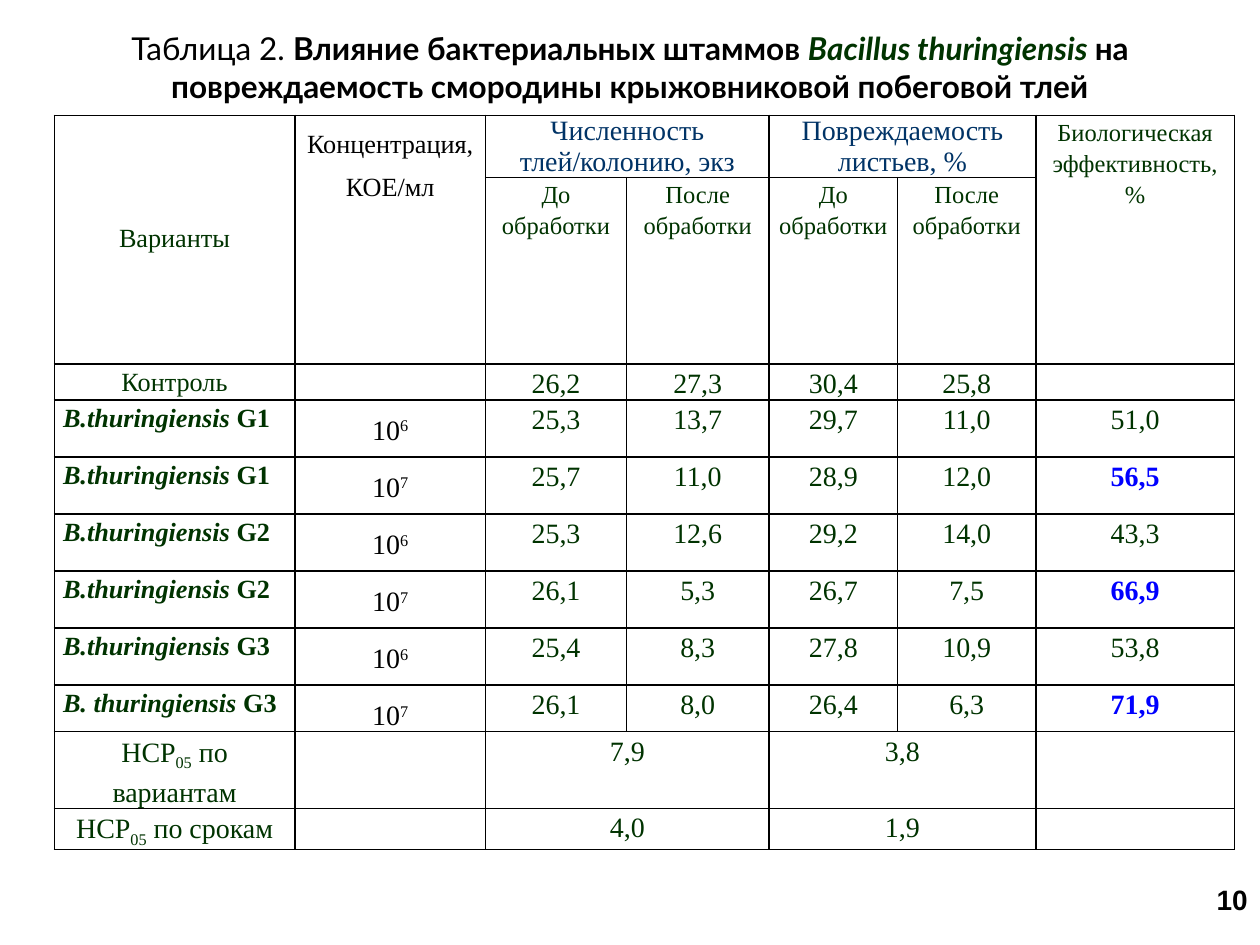
from lxml import etree
from pptx import Presentation
from pptx.dml.color import RGBColor
from pptx.enum.text import MSO_ANCHOR, MSO_AUTO_SIZE, PP_ALIGN
from pptx.oxml.ns import qn
from pptx.util import Pt

LEFT, CENTER, RIGHT = PP_ALIGN.LEFT, PP_ALIGN.CENTER, PP_ALIGN.RIGHT
MIDDLE, BOTTOM = MSO_ANCHOR.MIDDLE, MSO_ANCHOR.BOTTOM
NO_FIT = MSO_AUTO_SIZE.NONE
GREEN, NAVY, BLUE, BLACK = "003300", "003366", "0000FF", "000000"
SERIF = "Times New Roman"


def write(paragraph, text, size=16, color=GREEN, font=SERIF, bold=False,
          italic=False, baseline=0, align=CENTER, spacing=1.15):
    """Append a formatted run; baseline is in percent."""
    paragraph.alignment = align
    paragraph.line_spacing = spacing
    run = paragraph.add_run()
    run.text = text
    run.font.name = font
    run.font.size = Pt(size)
    run.font.bold = bold
    run.font.italic = italic
    run.font.color.rgb = RGBColor.from_string(color)
    if baseline:
        run.font._element.set("baseline", str(baseline * 1000))


prs = Presentation()
prs.slide_width, prs.slide_height = Pt(720), Pt(540)
slide = prs.slides.add_slide(prs.slide_layouts[5])

# Title
title = slide.shapes.title
title.left, title.top, title.width, title.height = Pt(36), Pt(16.6), Pt(648), Pt(43.2)
title.text_frame.auto_size = NO_FIT
title.text_frame.vertical_anchor = MIDDLE
heading = title.text_frame.paragraphs[0]
heading_format = {"size": 18, "font": "Lato", "spacing": 1.0}
write(heading, "Таблица 2. ", color=BLACK, **heading_format)
write(heading, "Влияние бактериальных штаммов ", color=BLACK, bold=True, **heading_format)
write(heading, "Bacillus thuringiensis ", bold=True, italic=True, **heading_format)
write(heading, "на повреждаемость смородины крыжовниковой побеговой тлей",
      color=BLACK, bold=True, **heading_format)

# Table grid
column_widths = [137.5, 109, 80.5, 81.5, 73.5, 79, 113.5]
row_heights = [35.4, 106.3, 20.6] + [32.6] * 5 + [26.6, 43.8, 23.6]
frame = slide.shapes.add_table(len(row_heights), len(column_widths), Pt(31), Pt(66),
                               Pt(sum(column_widths)), Pt(sum(row_heights)))
table = frame.table
table.first_row = table.horz_banding = False
for column, width in zip(table.columns, column_widths):
    column.width = Pt(width)
for row, height in zip(table.rows, row_heights):
    row.height = Pt(height)

# Plain cells with thin black borders
for cell in table.iter_cells():
    cell.margin_left = cell.margin_right = Pt(5)
    cell.margin_top = cell.margin_bottom = 0
    properties = cell._tc.get_or_add_tcPr()
    for side in ("a:lnL", "a:lnR", "a:lnT", "a:lnB"):
        border = etree.SubElement(properties, qn(side), w=str(Pt(1)))
        ink = etree.SubElement(border, qn("a:solidFill"))
        etree.SubElement(ink, qn("a:srgbClr"), val=BLACK)
    cell.fill.background()
    # Small end mark, so that empty cells do not stretch their rows
    cell.text_frame.paragraphs[0]._p.get_or_add_endParaRPr().set("sz", "1400")

# Merged cells
for column in (0, 1, 6):
    table.cell(0, column).merge(table.cell(1, column))
for row in (0, 9, 10):
    for column in (2, 4):
        table.cell(row, column).merge(table.cell(row, column + 1))

# Header
table.cell(0, 0).vertical_anchor = MIDDLE
table.cell(0, 0).margin_bottom = Pt(4)
concentration = table.cell(0, 1).text_frame
concentration.add_paragraph()
for paragraph, text in zip(concentration.paragraphs, ("Концентрация,", "КОЕ/мл")):
    write(paragraph, text, size=15, color=BLACK, spacing=1.5)
headers = [
    (0, 0, "Варианты", {"size": 15}),
    (0, 2, "Численность тлей/колонию, экз", {"color": NAVY, "spacing": 1.0}),
    (0, 4, "Повреждаемость листьев, %", {"color": NAVY, "spacing": 1.0}),
    (0, 6, "Биологическая эффективность, %", {"size": 14}),
]
for column in (2, 4):
    headers += [(1, column, "До обработки", {"size": 14}),
                (1, column + 1, "После обработки", {"size": 14})]
for row, column, text, style in headers:
    write(table.cell(row, column).text_frame.paragraphs[0], text, **style)

# Control row
for column, text in zip((0, 2, 3, 4, 5), ("Контроль", "26,2", "27,3", "30,4", "25,8")):
    write(table.cell(2, column).text_frame.paragraphs[0], text, size=16 if column else 15)

# Strains: name, strain, power of ten, values
strains = [
    ("B.thuringiensis", "G1", "6", "25,3 13,7 29,7 11,0 51,0"),
    ("B.thuringiensis", "G1", "7", "25,7 11,0 28,9 12,0 56,5"),
    ("B.thuringiensis", "G2", "6", "25,3 12,6 29,2 14,0 43,3"),
    ("B.thuringiensis", "G2", "7", "26,1 5,3 26,7 7,5 66,9"),
    ("B.thuringiensis", "G3", "6", "25,4 8,3 27,8 10,9 53,8"),
    ("B. thuringiensis", "G3", "7", "26,1 8,0 26,4 6,3 71,9"),
]
for row, (species, strain, power, values) in enumerate(strains, start=3):
    name = table.cell(row, 0).text_frame.paragraphs[0]
    write(name, species, size=15, bold=True, italic=True, align=LEFT)
    write(name, f" {strain}", size=15, bold=True, align=LEFT)
    dose = table.cell(row, 1).text_frame.paragraphs[0]
    write(dose, "10", color=BLACK, spacing=1.5)
    write(dose, power, color=BLACK, spacing=1.5, baseline=30)
    for column, value in enumerate(values.split(), start=2):
        best = column == 6 and power == "7"
        write(table.cell(row, column).text_frame.paragraphs[0], value,
              color=BLUE if best else GREEN, bold=best)

# Least significant differences
differences = [(" по вариантам", "7,9", "3,8"), (" по срокам", "4,0", "1,9")]
for row, (factor, aphids, leaves) in enumerate(differences, start=9):
    label = table.cell(row, 0).text_frame.paragraphs[0]
    write(label, "НСР")
    write(label, "05", baseline=-25)
    write(label, factor)
    write(table.cell(row, 2).text_frame.paragraphs[0], aphids)
    write(table.cell(row, 4).text_frame.paragraphs[0], leaves)

# Page number
page = slide.shapes.add_textbox(Pt(675.4), Pt(489.6), Pt(44.6), Pt(37.4)).text_frame
page.word_wrap = True
page.vertical_anchor = BOTTOM
write(page.paragraphs[0], "10", font="Arial", color=BLACK, bold=True,
      align=RIGHT, spacing=1.0)

prs.save("out.pptx")
